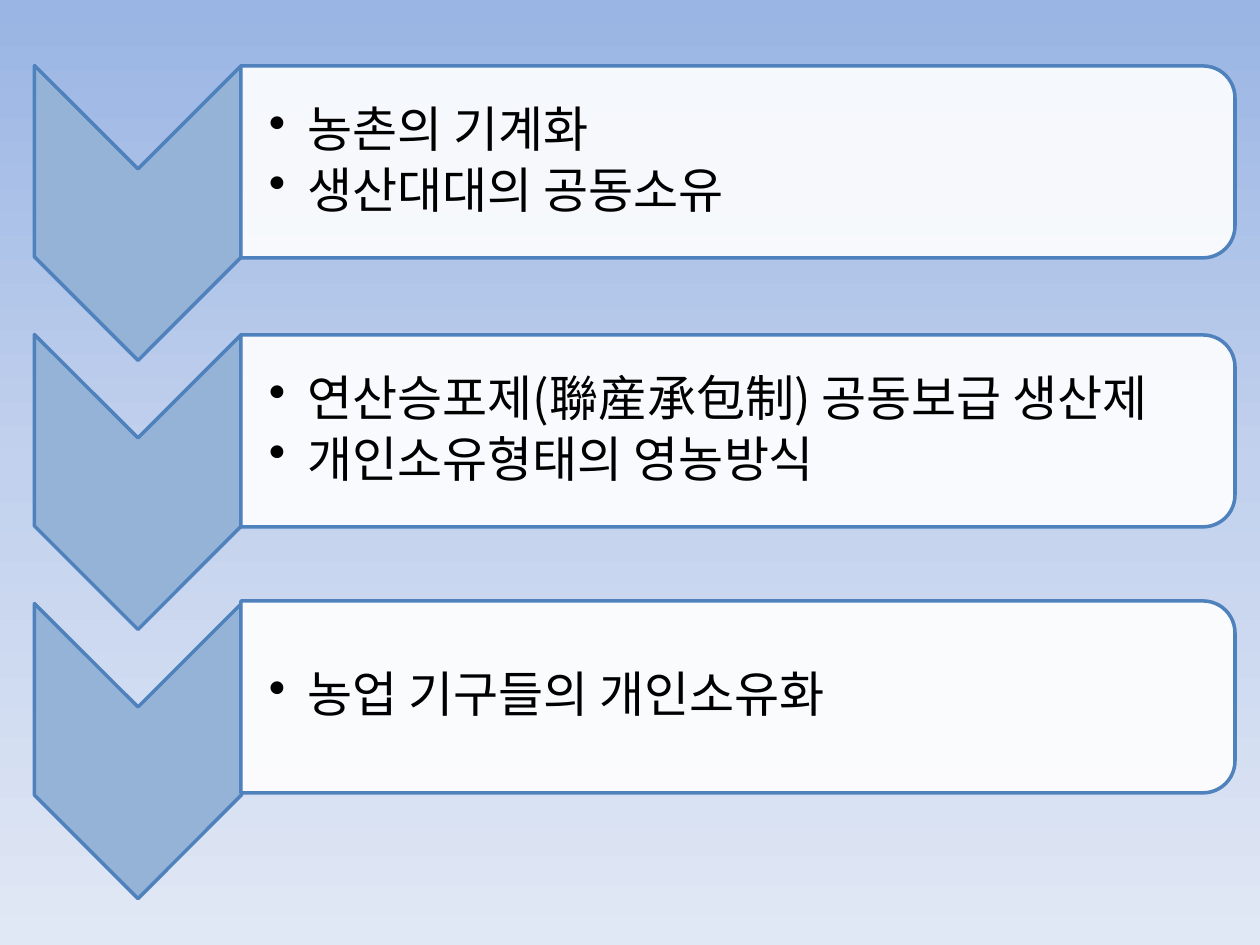
import copy
import pptx
import pptx.util
import pptx.dml.color
import pptx.enum.shapes
import pptx.enum.text
import pptx.oxml
import pptx.oxml.ns

ROWS = [
    {"mid": 162, "text": ["농촌의 기계화", "생산대대의 공동소유"]},
    {"mid": 431, "text": ["연산승포제(聯産承包制) 공동보급 생산제", "개인소유형태의 영농방식"]},
    {"mid": 697, "text": ["농업 기구들의 개인소유화"]},
]
THEME = {
    "back": [(0, "9AB5E4"), (0.5, "C2D1ED"), (1, "E1E8F5")],
    "arrow": "95B3D7", "line": "4F81BD", "panel": "FFFFFF", "ink": "000000",
    "font": "Noto Sans CJK KR", "size": 28, "edge": 2, "alpha": 90000,
}
ARROW = {"x": 138, "y": 213, "step": 269, "long": 295, "wide": 207}
PANEL = {"x": 738, "long": 192, "wide": 994}
LABEL = {"left": 241, "width": 985, "height": 173}
INSET = {"margin_left": 28, "margin_right": 2, "margin_top": 2, "margin_bottom": 2}
INDENT = 39
KINDS = pptx.enum.shapes.MSO_SHAPE


def px(n):
    return pptx.util.Emu(round(n * 914400 / 126))


def rgb(code):
    return pptx.dml.color.RGBColor.from_string(code)


def node(tag, **attrs):
    item = pptx.oxml.parse_xml(f"<a:{tag} {pptx.oxml.ns.nsdecls('a')}/>")
    for key, value in attrs.items():
        item.set(key, str(value))
    return item


def paint(slide):
    fill = slide.background.fill
    fill.gradient()
    fill.gradient_angle = 270
    stops = slide.element.xpath(".//a:gsLst")[0]
    stops.append(copy.deepcopy(stops[0]))
    for stop, (place, code) in zip(fill.gradient_stops, THEME["back"]):
        stop.position = place
        stop.color.rgb = rgb(code)


def turned(slide, kind, x, y, size, code):
    long, wide = size["long"], size["wide"]
    shape = slide.shapes.add_shape(
        kind, px(x - long / 2), px(y - wide / 2), px(long), px(wide))
    shape.rotation = 90
    shape.shadow.inherit = False
    shape.fill.solid()
    shape.fill.fore_color.rgb = rgb(code)
    shape.line.color.rgb = rgb(THEME["line"])
    shape.line.width = pptx.util.Pt(THEME["edge"])
    return shape


def label(slide, mid, lines):
    height = LABEL["height"]
    box = slide.shapes.add_textbox(
        px(LABEL["left"]), px(mid - height / 2), px(LABEL["width"]), px(height))
    frame = box.text_frame
    frame.word_wrap = True
    frame.vertical_anchor = pptx.enum.text.MSO_ANCHOR.MIDDLE
    for name, value in INSET.items():
        setattr(frame, name, px(value))
    for i, line in enumerate(lines):
        para = frame.add_paragraph() if i else frame.paragraphs[0]
        para.level = 1
        para.line_spacing = 0.9
        para.space_after = 0
        props = para._p.get_or_add_pPr()
        props.set("marL", str(px(INDENT)))
        props.set("indent", str(-px(INDENT)))
        after = props.find(pptx.oxml.ns.qn("a:spcAft"))
        after.clear()
        after.append(node("spcPct", val=15000))
        props.append(node("buChar", char="•"))
        run = para.add_run()
        run.text = line
        look = {"size": pptx.util.Pt(THEME["size"]), "name": THEME["font"]}
        for name, value in look.items():
            setattr(run.font, name, value)
        run.font.color.rgb = rgb(THEME["ink"])
        run._r.get_or_add_rPr().append(node("ea", typeface=THEME["font"]))


def main():
    deck = pptx.Presentation()
    deck.slide_width, deck.slide_height = px(1260), px(945)
    slide = deck.slides.add_slide(deck.slide_layouts[6])
    paint(slide)
    for i, row in enumerate(ROWS):
        turned(slide, KINDS.CHEVRON, ARROW["x"], ARROW["y"] + i * ARROW["step"],
               ARROW, THEME["arrow"])
        panel = turned(slide, KINDS.ROUND_2_SAME_RECTANGLE, PANEL["x"], row["mid"],
                       PANEL, THEME["panel"])
        tint = panel.element.xpath("./p:spPr/a:solidFill/a:srgbClr")[0]
        tint.append(node("alpha", val=THEME["alpha"]))
        label(slide, row["mid"], row["text"])
    deck.save("out.pptx")


if __name__ == "__main__":
    main()
